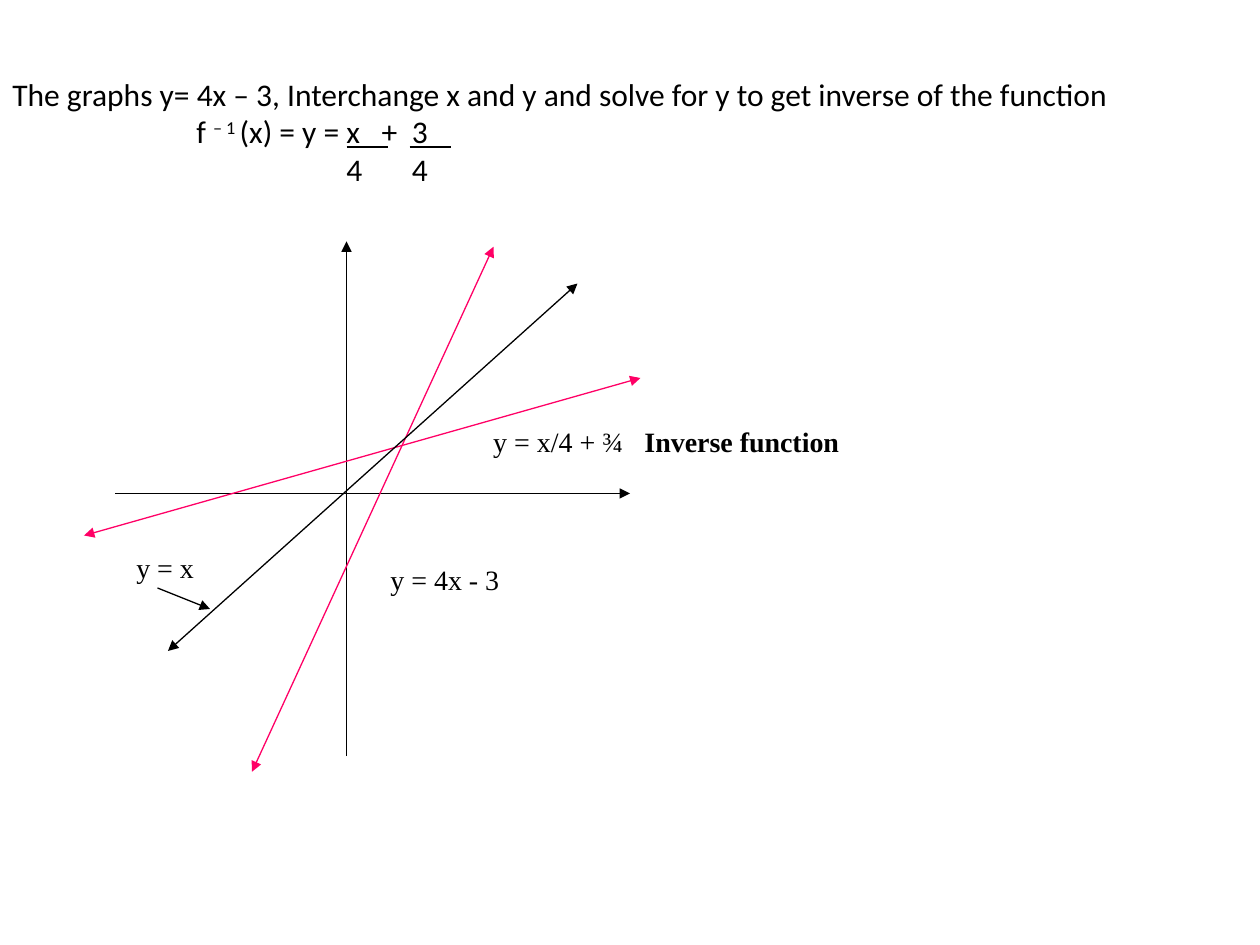
from lxml.etree import SubElement
from pptx import Presentation
from pptx.dml.color import RGBColor
from pptx.enum.shapes import MSO_CONNECTOR
from pptx.enum.text import MSO_ANCHOR
from pptx.oxml.ns import qn
from pptx.util import Inches, Pt

BLACK = RGBColor(0x00, 0x00, 0x00)
PINK = RGBColor(0xFF, 0x00, 0x66)

deck = Presentation()
deck.slide_width, deck.slide_height = Inches(10), Inches(7.5)
slide = deck.slides.add_slide(deck.slide_layouts[6])
CELL = deck.slide_width / 120  # grid of 120 columns by 90 rows


def write(lines, col, row, cols, rows, font="Times New Roman", size=16, anchor=MSO_ANCHOR.TOP):
    """Each line is (tab stops in inches, runs); a run is (text, style)."""
    box = slide.shapes.add_textbox(*(round(n * CELL) for n in (col, row, cols, rows)))
    frame = box.text_frame
    frame.word_wrap = True
    frame.vertical_anchor = anchor
    for index, (stops, runs) in enumerate(lines):
        paragraph = frame.add_paragraph() if index else frame.paragraphs[0]
        if stops:
            tabs = SubElement(paragraph._p.get_or_add_pPr(), qn("a:tabLst"))
            for stop in stops:
                SubElement(tabs, qn("a:tab"), pos=str(Inches(stop)), algn="l")
        for text, style in runs:
            run = paragraph.add_run()
            run.text = text
            run.font.name, run.font.size = font, Pt(size)
            run.font.color.rgb = BLACK
            run.font.bold = style == "bold"
            if style == "superscript":
                run.font._element.set("baseline", "30000")


def draw_line(start, end, color=BLACK, arrows=()):
    points = [round(n * CELL) for n in (*start, *end)]
    line = slide.shapes.add_connector(MSO_CONNECTOR.STRAIGHT, *points)
    line.line.color.rgb = color
    line.line.width = Pt(0.75)
    for arrow in arrows:
        SubElement(line.line._get_or_add_ln(), qn(f"a:{arrow}"), type="triangle")
    SubElement(line._element.spPr, qn("a:effectLst"))


# Heading with the inverse worked out
write([
    ((), [("The graphs y= 4x – 3, Interchange x and y and solve for y "
           "to get inverse of the function", None)]),
    ((1.46, 2.93, 3.17), [("\tf ", None), ("– 1 ", "superscript"),
                          ("(x) = y = x\t+\t3", None)]),
    ((2.65, 3.17), [("\t4\t4", None)]),
], 0, 7, 120, 11, font="Calibri", size=18, anchor=MSO_ANCHOR.MIDDLE)

for fraction_col in (33, 39):
    draw_line((fraction_col, 14), (fraction_col + 4, 14))

# Axes
END, BOTH = ("tailEnd",), ("headEnd", "tailEnd")
draw_line((11, 47), (60, 47), arrows=END)
draw_line((33, 72), (33, 23), arrows=END)

# Function, inverse and mirror line
draw_line((8, 51), (61, 36), PINK, BOTH)
draw_line((47, 23.5), (24, 73.5), PINK, BOTH)
draw_line((16, 62), (55, 27), arrows=BOTH)

# Labels, with a pointer to the mirror line
write([((), [("y = 4x - 3", None)])], 36, 53, 14, 4.4)
write([((1.2,), [("y = x/4 + ¾", None), ("\tInverse function", "bold")])],
      45.8, 39.8, 37, 4.4)
write([((), [("y = x", None)])], 11.8, 51.8, 9, 4.4)
draw_line((15, 56), (20, 58), arrows=END)

deck.save("out.pptx")
